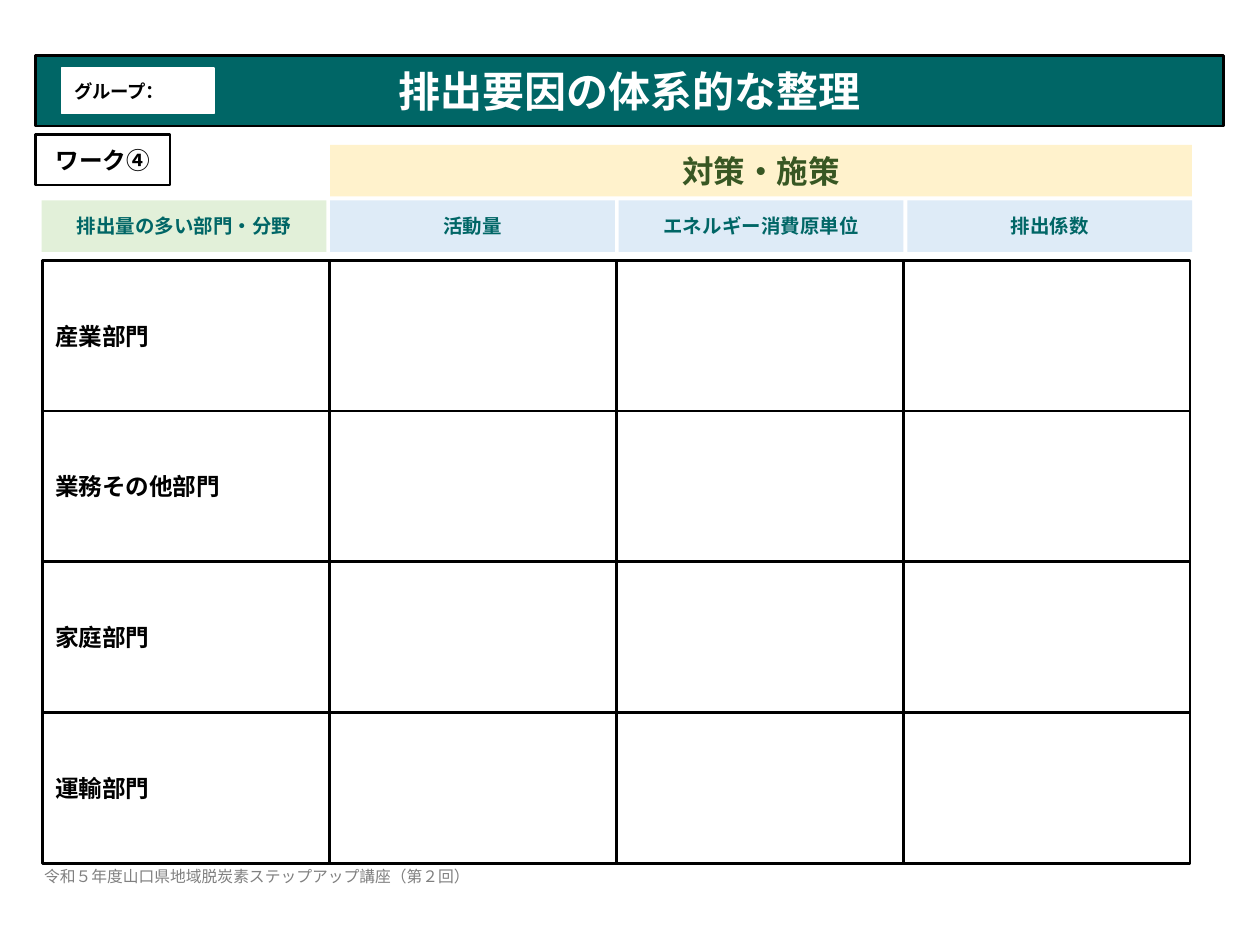
from pptx import Presentation
from pptx.dml.color import RGBColor
from pptx.enum.shapes import MSO_SHAPE
from pptx.enum.text import MSO_ANCHOR, MSO_AUTO_SIZE, PP_ALIGN
from pptx.util import Pt

COLORS = {
    "teal": "006666", "white": "FFFFFF", "black": "000000", "gray": "808080",
    "green": "E2F0D9", "blue": "DEEBF7", "cream": "FFF2CC", "dark_green": "385723",
}
SECTORS = ["産業部門", "業務その他部門", "家庭部門", "運輸部門"]
HEADINGS = ["排出量の多い部門・分野", "活動量", "エネルギー消費原単位", "排出係数"]


def color(name):
    return RGBColor.from_string(COLORS[name])


def place(shape, left, top, width, height):
    shape.left, shape.top = Pt(left), Pt(top)
    shape.width, shape.height = Pt(width), Pt(height)


def paint(shape, fill, line=None, line_width=1.5):
    shape.fill.solid()
    shape.fill.fore_color.rgb = color(fill)
    if line:
        shape.line.color.rgb = color(line)
        shape.line.width = Pt(line_width)
    else:
        shape.line.fill.background()


def write(shape, text, size, ink, align=PP_ALIGN.CENTER, bold=True, font="Calibri"):
    frame = shape.text_frame
    frame.text = text
    frame.word_wrap = True
    frame.auto_size = MSO_AUTO_SIZE.NONE
    frame.vertical_anchor = MSO_ANCHOR.MIDDLE
    paragraph = frame.paragraphs[0]
    paragraph.alignment = align
    for run in paragraph.runs:
        run.font.name, run.font.size, run.font.bold = font, Pt(size), bold
        run.font.color.rgb = color(ink)


def add_box(slide, box, fill, line=None, line_width=1.5):
    shape = slide.shapes.add_shape(MSO_SHAPE.RECTANGLE, *map(Pt, box))
    shape.shadow.inherit = False
    paint(shape, fill, line, line_width)
    return shape


def add_title_bar(slide, left, top, width, height):
    title = slide.shapes.title
    place(title, left, top, width, height)
    paint(title, "teal", "black")
    write(title, "排出要因の体系的な整理", 24, "white")
    group = add_box(slide, (left + 15, top + 7.2, 87, 26), "white", "white", 1)
    write(group, "グループ：", 10.5, "black", PP_ALIGN.LEFT)


def add_footer(slide, left, top, width, height):
    footer = slide.shapes.add_textbox(*map(Pt, (left, top, width, height)))
    write(footer, "令和５年度山口県地域脱炭素ステップアップ講座（第２回）", 9, "gray",
          PP_ALIGN.LEFT, False, "Noto Sans CJK JP")
    frame = footer.text_frame
    frame.margin_left = frame.margin_right = Pt(5)
    frame.margin_top = frame.margin_bottom = Pt(3)
    frame.paragraphs[0].line_spacing = 0.9


def add_headings(slide, left, top, width, height):
    gap = 2.2
    column = (width - gap * (len(HEADINGS) - 1)) / len(HEADINGS)
    row = (height - gap) / 2
    # Band over the three measure columns
    start = left + column + gap
    band = add_box(slide, (start, top, left + width - start, row), "cream")
    write(band, "対策・施策", 18, "dark_green")
    # Column headings
    for index, heading in enumerate(HEADINGS):
        box = (left + index * (column + gap), top + row + gap, column, row)
        shape = add_box(slide, box, "blue" if index else "green")
        write(shape, heading, 11.1, "teal")


def add_grid(slide, left, top, width, height):
    column, row = width / len(HEADINGS), height / len(SECTORS)
    for row_index, sector in enumerate(SECTORS):
        for column_index in range(len(HEADINGS)):
            box = (left + column_index * column, top + row_index * row, column, row)
            cell = add_box(slide, box, "white", "black")
            if column_index == 0:
                write(cell, sector, 13.5, "black", PP_ALIGN.LEFT)


def add_work_label(slide, *box):
    label = add_box(slide, box, "white", "black")
    write(label, "ワーク④", 13.5, "black")


def main():
    presentation = Presentation()
    presentation.slide_width, presentation.slide_height = Pt(720), Pt(540)
    slide = presentation.slides.add_slide(presentation.slide_layouts[5])
    add_title_bar(slide, 20.2, 31.7, 679, 40.3)
    add_footer(slide, 20.2, 488.9, 275.8, 24.5)
    add_headings(slide, 23.8, 82.8, 657.4, 61.2)
    add_grid(slide, 24.5, 148.7, 655.6, 344.6)
    add_work_label(slide, 20.2, 77, 77, 28.8)
    presentation.save("out.pptx")


if __name__ == "__main__":
    main()
